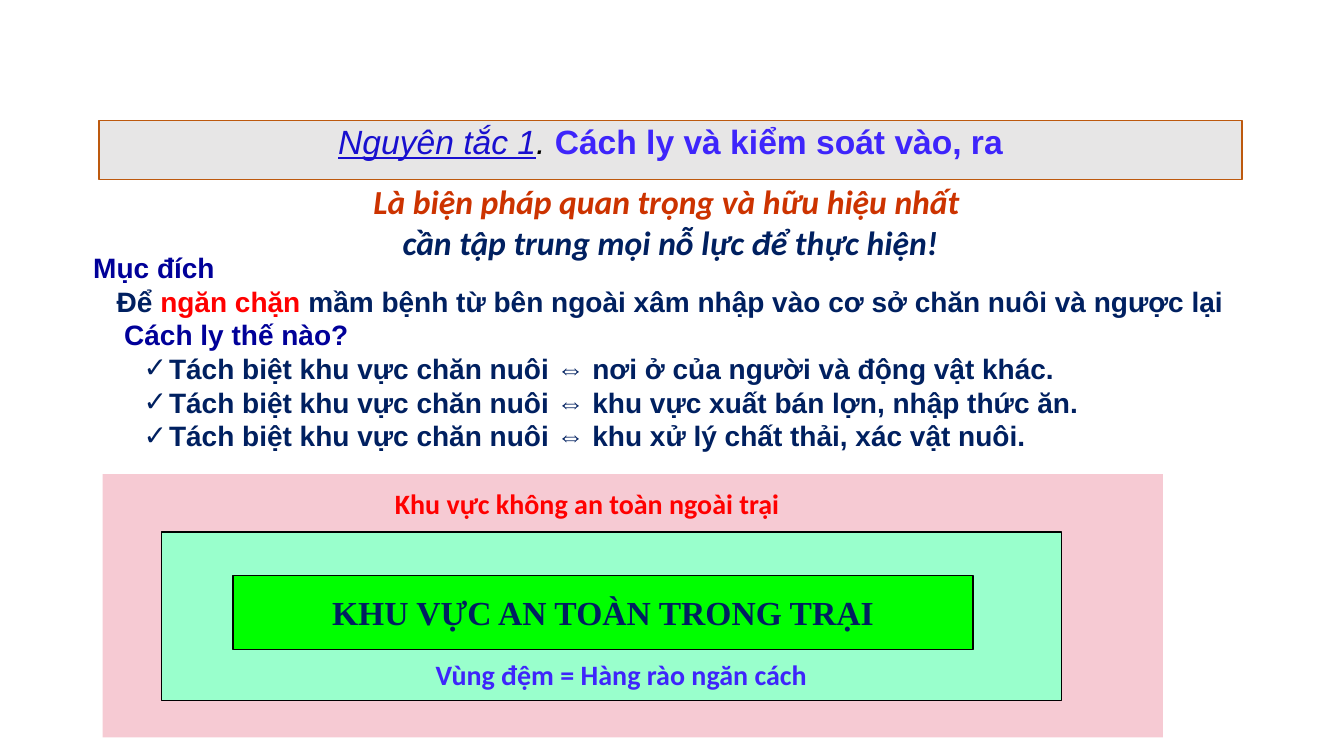
from pptx import Presentation
from pptx.dml.color import RGBColor
from pptx.enum.shapes import MSO_SHAPE
from pptx.enum.text import MSO_ANCHOR, PP_ALIGN
from pptx.util import Cm, Pt
from lxml.etree import SubElement
from pptx.oxml.ns import qn

NAVY, RED, BLUE, DARK = "002060", "FF0000", "3E25FB", "000099"


def color(code):
    return RGBColor.from_string(code)


def add_run(para, text, size, face, code, bold=True, slant=False, under=False):
    run = para.add_run()
    run.text = text
    font = run.font
    font.size, font.name = Pt(size), face
    font.bold, font.italic, font.underline = bold, slant, under
    font.color.rgb = color(code)


def add_box(slide, place, fill, line=None):
    box = slide.shapes.add_shape(MSO_SHAPE.RECTANGLE, *map(Cm, place))
    box.shadow.inherit = False
    box.fill.solid()
    box.fill.fore_color.rgb = color(fill)
    if line:
        box.line.color.rgb = color(line)
        box.line.width = Pt(1)
    else:
        box.line.fill.background()
    return box.text_frame


def add_text(slide, place, anchor=MSO_ANCHOR.TOP):
    frame = slide.shapes.add_textbox(*map(Cm, place)).text_frame
    frame.word_wrap = True
    frame.vertical_anchor = anchor
    return frame


def add_para(frame, first=False, align=PP_ALIGN.LEFT):
    para = frame.paragraphs[0] if first else frame.add_paragraph()
    para.alignment = align
    return para


def indent(para, left, hang=0, mark=None):
    props = para._p.get_or_add_pPr()
    props.set("marL", str(Cm(left)))
    props.set("indent", str(Cm(hang)))
    if mark:
        SubElement(props, qn("a:buFont")).set("typeface", "Arial")
        SubElement(props, qn("a:buChar")).set("char", mark)


def add_title(slide):
    # Heading bar
    frame = add_box(slide, (2.5, 3.04, 28.8, 1.48), "E7E6E6", "BD590E")
    frame.vertical_anchor = MSO_ANCHOR.TOP
    para = add_para(frame, True, PP_ALIGN.CENTER)
    para.line_spacing = 0.9
    add_run(para, "Nguyên tắc 1", 24, "Arial", "180FCF", False, True, True)
    add_run(para, ". ", 24, "Arial", "000000", False, True)
    add_run(para, "Cách ly và kiểm soát vào, ra", 24, "Arial", BLUE)

    # Two-line motto
    frame = add_text(slide, (2.01, 4.5, 29.77, 2.16), MSO_ANCHOR.MIDDLE)
    motto = (("Là biện pháp quan trọng và hữu hiệu nhất ", "CC3300"),
             ("cần tập trung mọi nỗ lực để thực hiện!", NAVY))
    for i, (text, code) in enumerate(motto):
        para = add_para(frame, i == 0, PP_ALIGN.CENTER)
        add_run(para, text, 24, "Calibri", code, slant=True)


def add_zones(slide):
    # Nested zones, outermost first
    add_box(slide, (2.59, 11.95, 26.72, 6.63), "F6CAD3")
    add_box(slide, (4.07, 13.41, 22.68, 4.24), "99FFCC", "000000")
    frame = add_box(slide, (5.87, 14.5, 18.65, 1.87), "00FF00", "000000")
    frame.word_wrap = False
    frame.vertical_anchor = MSO_ANCHOR.MIDDLE
    para = add_para(frame, True, PP_ALIGN.CENTER)
    add_run(para, "KHU VỰC AN TOÀN TRONG TRẠI", 24, "Times New Roman", NAVY)

    # Zone labels
    labels = (((7.67, 16.45, 15.98, 1.12), PP_ALIGN.CENTER,
               "Vùng đệm = Hàng rào ngăn cách", BLUE),
              ((9.7, 12.13, 11.91, 1.12), PP_ALIGN.LEFT,
               "Khu vực không an toàn ngoài trại", RED))
    for place, align, text, code in labels:
        para = add_para(add_text(slide, place), True, align)
        add_run(para, text, 20, "Calibri", code)


def add_body(slide):
    frame = add_text(slide, (2.1, 6.19, 31.24, 6.38))

    # Purpose and question
    lines = (
        (0, (("Mục đích", DARK),)),
        (0.59, (("Để ", NAVY), ("ngăn chặn ", RED),
                ("mầm bệnh từ bên ngoài xâm nhập vào cơ sở chăn nuôi "
                 "và ngược lại", NAVY))),
        (0.78, (("Cách ly thế nào?", DARK),)),
    )
    for i, (left, parts) in enumerate(lines):
        para = add_para(frame, i == 0)
        indent(para, left)
        for text, code in parts:
            add_run(para, text, 20, "Arial", code)

    # Checked list
    for end in ("nơi ở của người và động vật khác.",
                "khu vực xuất bán lợn, nhập thức ăn.",
                "khu xử lý chất thải, xác vật nuôi."):
        para = add_para(frame)
        para.level = 1
        indent(para, 1.91, -0.64, "✓")
        text = "Tách biệt khu vực chăn nuôi ⇔ " + end
        add_run(para, text, 20, "Arial", NAVY)

    for para in frame.paragraphs:
        para.line_spacing = Pt(24)


def main():
    deck = Presentation()
    deck.slide_width, deck.slide_height = Cm(33.87), Cm(19.05)
    slide = deck.slides.add_slide(deck.slide_layouts[6])
    add_zones(slide)
    add_title(slide)
    add_body(slide)
    deck.save("out.pptx")


if __name__ == "__main__":
    main()
